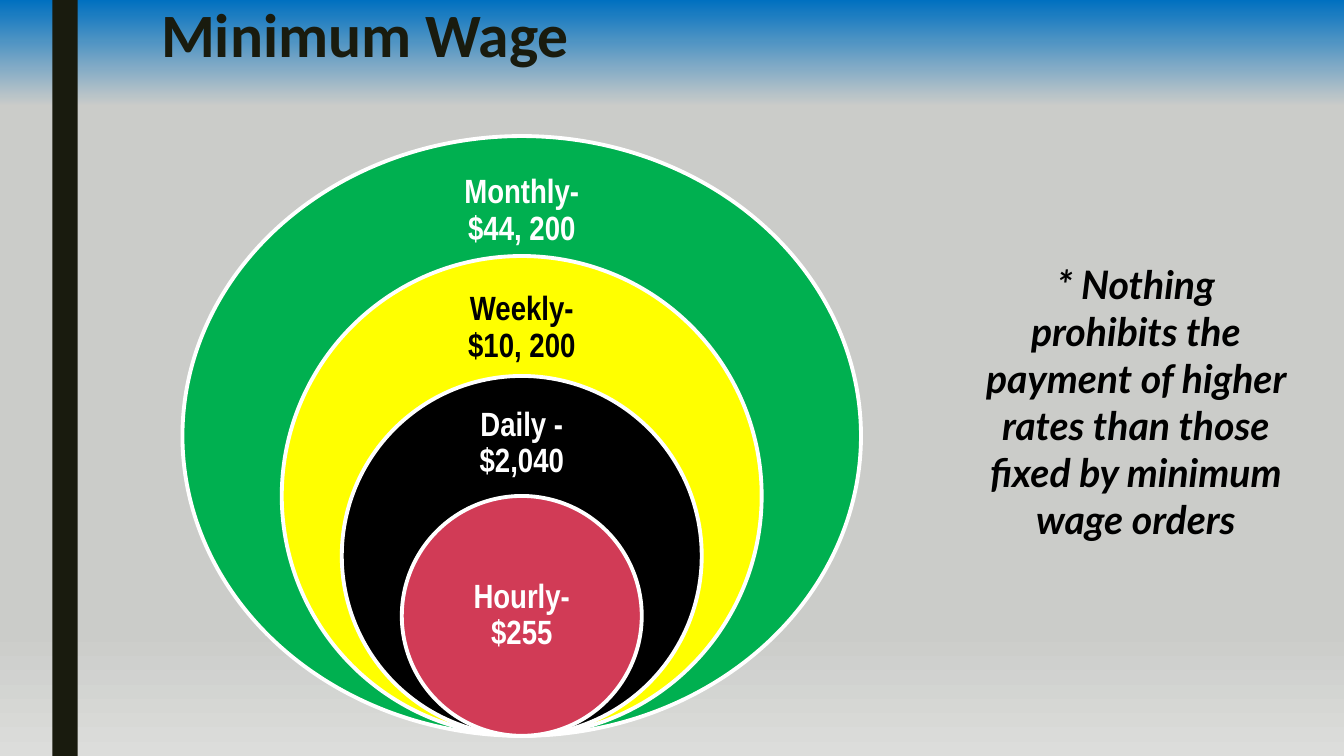
import copy
from dataclasses import dataclass

import pptx
import pptx.dml.color
import pptx.enum.shapes
import pptx.enum.text
import pptx.oxml.ns
import pptx.util

Inches = pptx.util.Inches
Pt = pptx.util.Pt
Align = pptx.enum.text.PP_ALIGN
Anchor = pptx.enum.text.MSO_ANCHOR
Shape = pptx.enum.shapes.MSO_SHAPE


@dataclass(frozen=True)
class Theme:
    ink: str = "191B0E"
    white: str = "FFFFFF"
    black: str = "000000"
    green: str = "00B050"
    yellow: str = "FFFF00"
    rose: str = "D13B56"
    sky: tuple = ((0, "0070C0"), (14, "CBCCC9"), (83, "CBCCC9"), (100, "DCDDDB"))
    title: int = 44
    note: int = 28
    label: int = 24
    edge: float = 2.75


THEME = Theme()

# text, fill, text colour, label top and height as shares of the ring height
RINGS = (
    ("Monthly- $44, 200", THEME.green, THEME.white, 0.05, 0.15),
    ("Weekly- $10, 200", THEME.yellow, THEME.black, 0.06, 0.18),
    ("Daily - $2,040", THEME.black, THEME.white, 0.075, 0.225),
    ("Hourly- $255", THEME.rose, THEME.white, 0.25, 0.5),
)


def rgb(code):
    return pptx.dml.color.RGBColor.from_string(code)


def add_text(slide, box, text, *, font, size, color, align=Align.LEFT,
             anchor=Anchor.TOP, italic=False, inset=None, space=None, after=0):
    frame = slide.shapes.add_textbox(*map(Inches, box)).text_frame
    frame.word_wrap = True
    frame.vertical_anchor = anchor
    if inset is not None:
        frame.margin_left = frame.margin_right = Inches(inset)
        frame.margin_top = frame.margin_bottom = Inches(inset)
    para = frame.paragraphs[0]
    para.alignment = align
    para.line_spacing = space
    para.space_after = Pt(after)
    run = para.add_run()
    run.text = text
    run.font.name = font
    run.font.size = Pt(size)
    run.font.bold = True
    run.font.italic = italic
    run.font.color.rgb = rgb(color)


def add_form(slide, kind, box, fill, edge=None):
    form = slide.shapes.add_shape(kind, *map(Inches, box))
    form.shadow.inherit = False
    form.fill.solid()
    form.fill.fore_color.rgb = rgb(fill)
    if edge:
        form.line.color.rgb = rgb(edge)
        form.line.width = Pt(THEME.edge)
    else:
        form.line.fill.background()


def paint_back(slide):
    fill = slide.background.fill
    fill.gradient()
    fill.gradient_angle = 270
    stops = slide.element.find(".//" + pptx.oxml.ns.qn("a:gsLst"))
    for _ in range(len(THEME.sky) - len(stops)):
        stops.append(copy.deepcopy(stops[0]))
    for stop, (place, color) in zip(fill.gradient_stops, THEME.sky):
        stop.position = place / 100
        stop.color.rgb = rgb(color)


def add_rings(slide, box):
    """Nest the rings on a shared base; only the outer one fills the width."""
    left, top, width, height = box
    mid, base = left + width / 2, top + height
    for i, (text, fill, color, drop, share) in enumerate(RINGS):
        tall = height * (1 - i / 5)
        wide = tall if i else width
        head = base - tall
        add_form(slide, Shape.OVAL, (mid - wide / 2, head, wide, tall),
                 fill, THEME.white)
        span = 1.68 if i else 1.88
        add_text(slide, (mid - span / 2, head + drop * tall, span, share * tall),
                 text, font="Arial Narrow", size=THEME.label, color=color,
                 align=Align.CENTER, anchor=Anchor.MIDDLE, inset=0.19, space=0.9,
                 after=0.35 * THEME.label)


def build_wage(slide, width, height):
    paint_back(slide)
    add_form(slide, Shape.RECTANGLE, (0.52, 0, 0.25, height), THEME.ink)
    add_text(slide, (1.5, 0, width - 1.5, 1.16), "Minimum Wage", font="Calibri",
             size=THEME.title, color=THEME.ink, space=0.89)
    add_rings(slide, (1.81, 1.35, 6.73, 5.95))
    add_text(slide, (9.64, 2.53, 3.25, 2.93),
             "* Nothing prohibits the payment of higher rates than those "
             "fixed by minimum wage orders",
             font="Lato", size=THEME.note, color=THEME.black,
             align=Align.CENTER, italic=True)


def main():
    deck = pptx.Presentation()
    width, height = 13.33, 7.5
    deck.slide_width, deck.slide_height = Inches(width), Inches(height)
    build_wage(deck.slides.add_slide(deck.slide_layouts[6]), width, height)
    deck.save("out.pptx")


if __name__ == "__main__":
    main()
